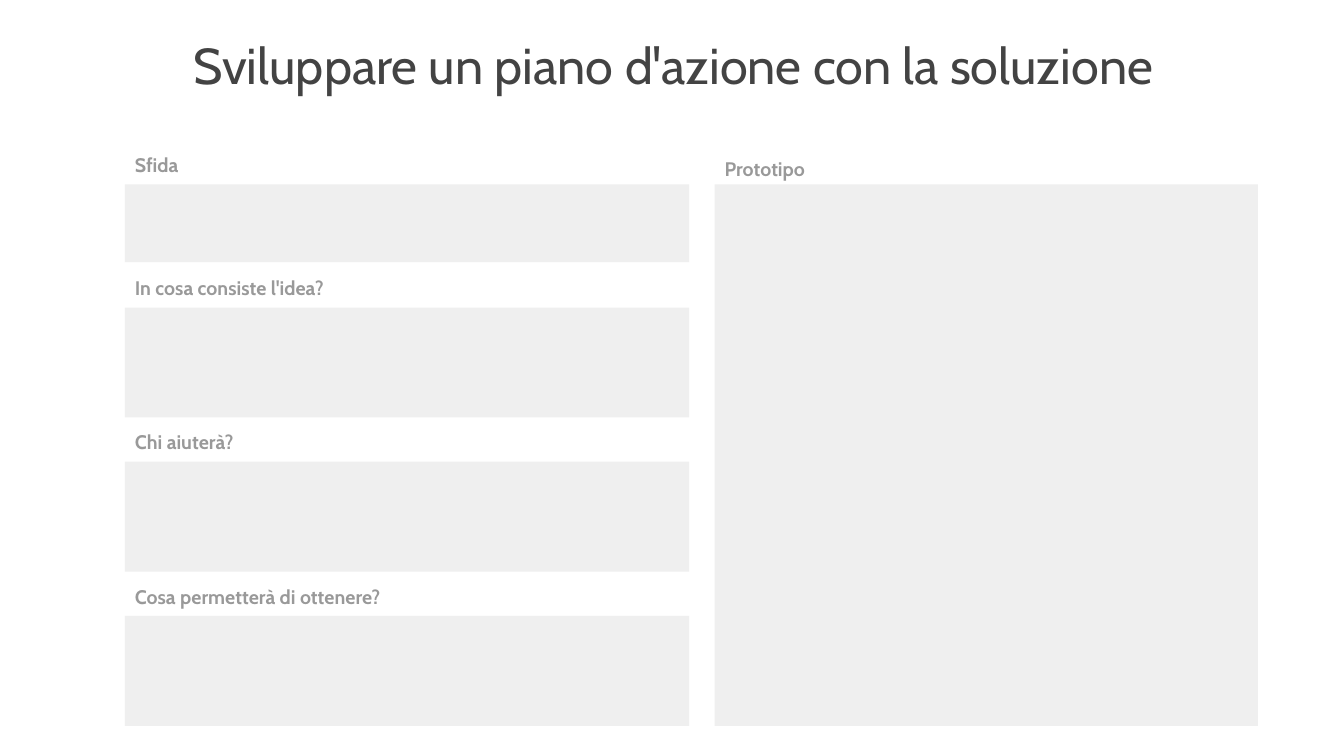
from dataclasses import dataclass

from pptx import Presentation
from pptx.dml.color import RGBColor
from pptx.enum.shapes import MSO_SHAPE
from pptx.enum.text import MSO_ANCHOR, MSO_AUTO_SIZE, PP_ALIGN
from pptx.slide import Slide
from pptx.text.text import TextFrame
from pptx.util import Cm, Pt

RECTANGLE = MSO_SHAPE.RECTANGLE
TOP = MSO_ANCHOR.TOP
NO_AUTOFIT = MSO_AUTO_SIZE.NONE
LEFT, CENTER = PP_ALIGN.LEFT, PP_ALIGN.CENTER

FONT = "Cabin"
COLORS = {"title": "434343", "label": "999999", "field": "EFEFEF"}
TITLE = "Sviluppare un piano d'azione con la soluzione"

LEFT_COLUMN, LEFT_WIDTH = 3.15, 14.22
RIGHT_COLUMN, RIGHT_WIDTH = 18.01, 13.69
FIRST_TOP = 4.65
SECOND_TOP, ROW_PITCH, ROW_HEIGHT = 7.75, 3.885, 2.77
LABEL_HEIGHT = 1.3


@dataclass
class Section:
    """A labelled empty field; lengths are in centimetres."""
    label: str
    left: float
    top: float
    width: float
    height: float
    label_width: float
    label_rise: float = 1.04


QUESTIONS = [
    ("In cosa consiste l'idea?", RIGHT_WIDTH),
    ("Chi aiuterà?", LEFT_WIDTH),
    ("Cosa permetterà di ottenere?", LEFT_WIDTH),
]
SECTIONS = [
    Section("Sfida", LEFT_COLUMN, FIRST_TOP, LEFT_WIDTH, 1.96, 3.1),
    Section("Prototipo", RIGHT_COLUMN, FIRST_TOP, RIGHT_WIDTH, 13.64, 4.39, 0.94),
] + [
    Section(label, LEFT_COLUMN, SECOND_TOP + row * ROW_PITCH, LEFT_WIDTH,
            ROW_HEIGHT, label_width)
    for row, (label, label_width) in enumerate(QUESTIONS)
]


def write_text(frame: TextFrame, text: str, size: float, color: str,
               bold: bool, align: PP_ALIGN, inset: float) -> None:
    """Fill a frame with one formatted paragraph; inset is the vertical margin."""
    frame.text = text
    frame.word_wrap = True
    frame.auto_size = NO_AUTOFIT
    frame.vertical_anchor = TOP
    frame.margin_left = frame.margin_right = Cm(0.25)
    frame.margin_top = frame.margin_bottom = Cm(inset)
    para = frame.paragraphs[0]
    para.alignment = align
    for span in para.runs:
        span.font.name = FONT
        span.font.size = Pt(size)
        span.font.bold = bold
        span.font.color.rgb = RGBColor.from_string(COLORS[color])


def add_title(page: Slide) -> None:
    title = page.shapes.title
    title.left, title.top = Cm(0.89), Cm(0.91)
    title.width, title.height = Cm(32.16), Cm(2.01)
    write_text(title.text_frame, TITLE, 36, "title", False, CENTER, 0.13)
    para = title.text_frame.paragraphs[0]
    para.line_spacing = 0.9
    para.space_before = Pt(0)


def add_section(page: Slide, section: Section) -> None:
    label = page.shapes.add_textbox(
        Cm(section.left), Cm(section.top - section.label_rise),
        Cm(section.label_width), Cm(LABEL_HEIGHT))
    write_text(label.text_frame, section.label, 14, "label", True, LEFT, 0.25)

    field = page.shapes.add_shape(
        RECTANGLE, Cm(section.left), Cm(section.top),
        Cm(section.width), Cm(section.height))
    field.shadow.inherit = False
    field.fill.solid()
    field.fill.fore_color.rgb = RGBColor.from_string(COLORS["field"])
    field.line.fill.background()


def main() -> None:
    deck = Presentation()
    deck.slide_width, deck.slide_height = Cm(33.87), Cm(19.05)
    page = deck.slides.add_slide(deck.slide_layouts.get_by_name("Title Only"))
    add_title(page)
    for section in SECTIONS:
        add_section(page, section)
    deck.save("out.pptx")


if __name__ == "__main__":
    main()
